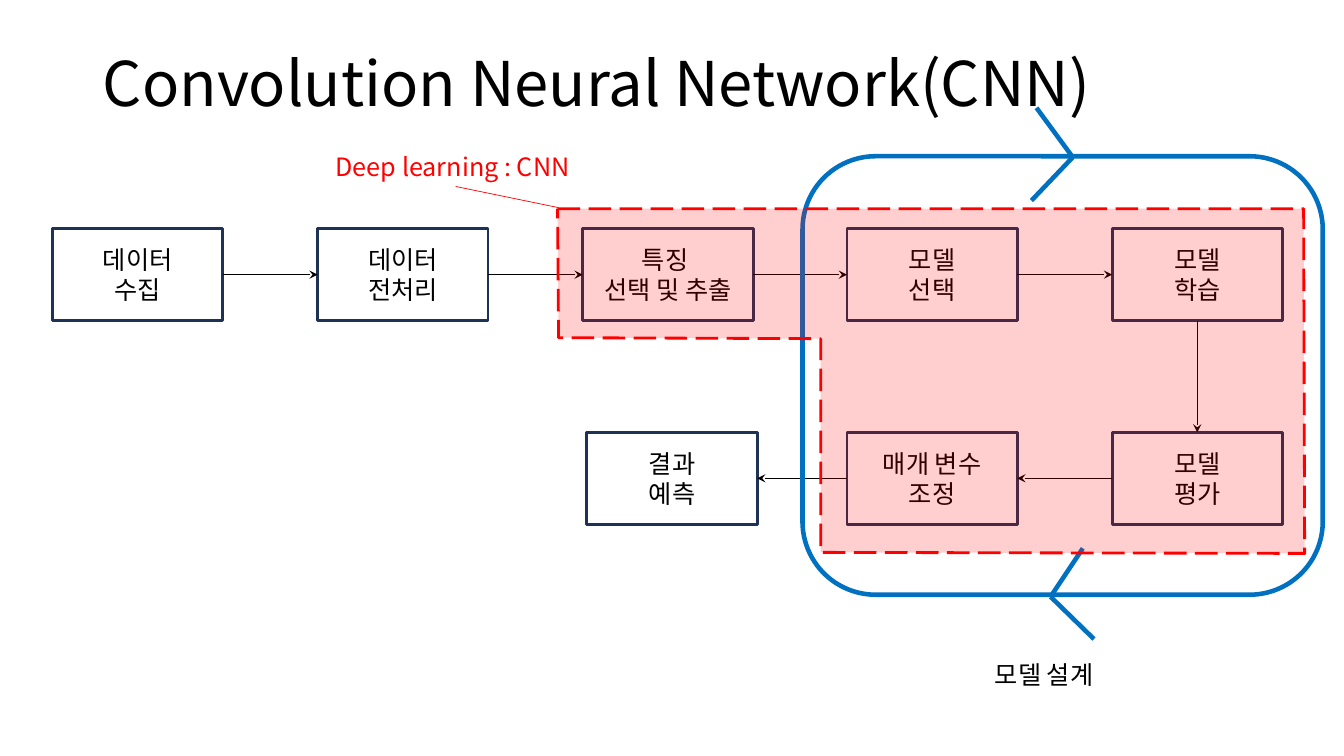
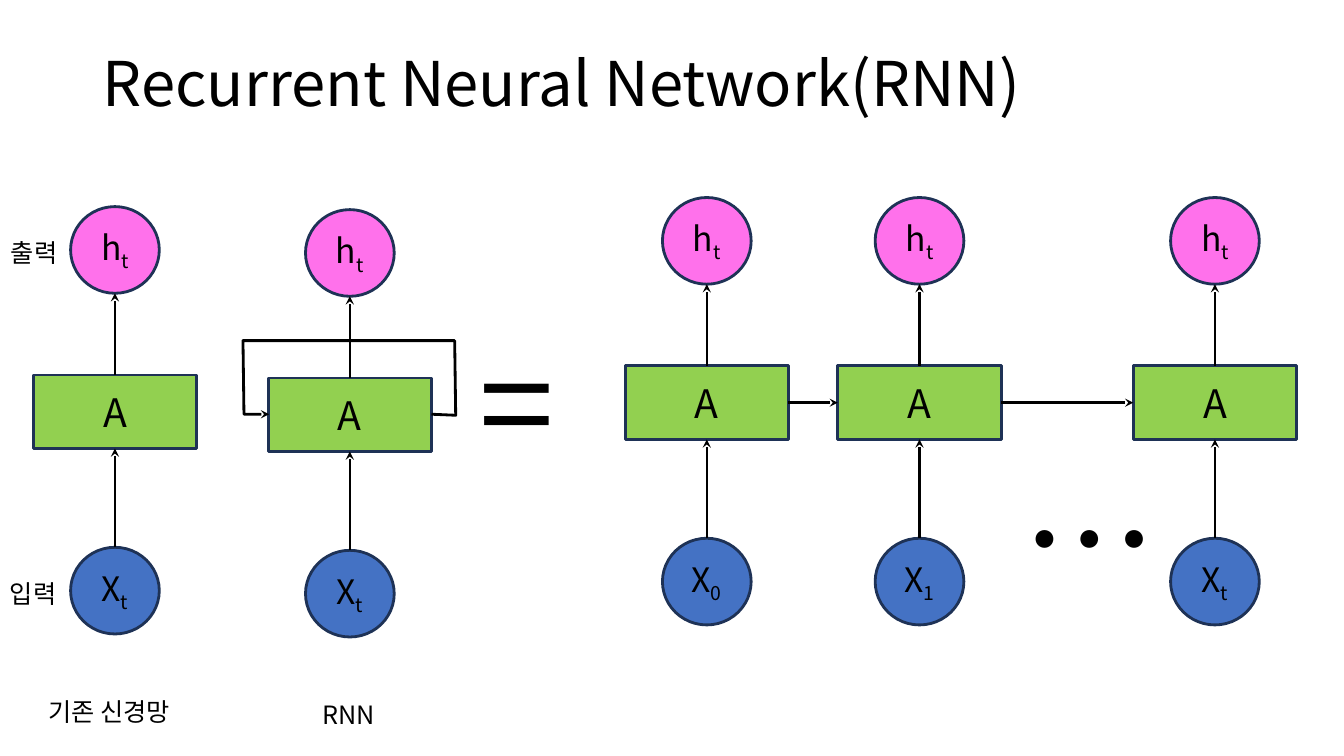
"""Build two slides on convolutional and recurrent neural networks."""
from lxml import etree
from pptx import Presentation
from pptx import util as u
from pptx.dml import color
from pptx.enum import dml, shapes, text
from pptx.oxml import ns

SCALE = 9144
FONT = "Noto Sans CJK KR"
COLORS = {
    "ink": "000000", "border": "1E3256", "paper": "FFFFFF", "design": "0070C0",
    "deep": "FF0000", "cell": "92D050", "input": "4472C4", "output": "FF71EB",
}


def px(value):
    """Turn px (100 to the inch) into EMU."""
    return u.Emu(value * SCALE)


def rgb(name):
    """Look up a named colour."""
    return color.RGBColor.from_string(COLORS[name])


def style_text(frame, size, ink="ink", align=None):
    """Format every run of a text frame."""
    for para in frame.paragraphs:
        para.alignment = align
        for span in para.runs:
            span.font.size = u.Pt(size)
            span.font.color.rgb = rgb(ink)
            span.font.name = FONT
            etree.SubElement(span.font._element, ns.qn("a:ea"), typeface=FONT)


def style_line(item, ink, width, arrow=False):
    """Set line colour and width, with an optional arrowhead at the end."""
    item.line.color.rgb = rgb(ink)
    item.line.width = u.Pt(width)
    if arrow:
        outline = item._element.spPr.find(ns.qn("a:ln"))
        etree.SubElement(outline, ns.qn("a:tailEnd"), type="stealth")


def style_shape(shape, fill, ink, width, arrow=False):
    """Set fill and line of a shape and drop its shadow."""
    shape.shadow.inherit = False
    if fill:
        shape.fill.solid()
        shape.fill.fore_color.rgb = rgb(fill)
    else:
        shape.fill.background()
    style_line(shape, ink, width, arrow)


def add_node(page, kind, box, label, size, fill=None, sub=None):
    """Add an outlined shape with a centred label and optional subscript."""
    shape = page.shapes.add_shape(kind, *map(px, box))
    style_shape(shape, fill, "border", 2)
    frame = shape.text_frame
    frame.text = label
    frame.vertical_anchor = text.MSO_ANCHOR.MIDDLE
    if sub:
        span = frame.paragraphs[0].add_run()
        span.text = sub
        span.font._element.set("baseline", "-25000")
    style_text(frame, size, align=text.PP_ALIGN.CENTER)
    return shape


def add_label(page, box, label, size=18, ink="ink"):
    """Add a one-line text box."""
    shape = page.shapes.add_textbox(*map(px, box))
    frame = shape.text_frame
    frame.text = label
    frame.word_wrap = False
    frame.auto_size = text.MSO_AUTO_SIZE.SHAPE_TO_FIT_TEXT
    style_text(frame, size, ink)


def add_link(page, start, end, ink="ink", width=0.5, arrow=True):
    """Draw a straight line between points or (shape, side) pairs."""
    link = page.shapes.add_connector(shapes.MSO_CONNECTOR.STRAIGHT, 0, 0, 0, 0)
    if isinstance(start[0], int):
        link.begin_x, link.begin_y = map(px, start)
    else:
        link.begin_connect(*start)
    if isinstance(end[0], int):
        link.end_x, link.end_y = map(px, end)
    else:
        link.end_connect(*end)
    style_line(link, ink, width, arrow)
    etree.SubElement(link._element.spPr, ns.qn("a:effectLst"))


def add_outline(page, left, top, points, close):
    """Build a freeform from points relative to a corner."""
    placed = [(left + x, top + y) for x, y in points]
    builder = page.shapes.build_freeform(*placed[0], scale=SCALE)
    builder.add_line_segments(placed[1:], close=close)
    return builder.convert_to_shape()


def add_page(deck, heading):
    """Add a title-only slide with the shared title style."""
    page = deck.slides.add_slide(deck.slide_layouts[5])
    title = page.shapes.title
    title.left, title.top, title.width, title.height = map(px, (92, 40, 1150, 91))
    frame = title.text_frame
    frame.text = heading
    frame.auto_size = text.MSO_AUTO_SIZE.NONE
    frame.vertical_anchor = text.MSO_ANCHOR.MIDDLE
    frame.paragraphs[0].line_spacing = 0.9
    style_text(frame, 44, align=text.PP_ALIGN.LEFT)
    return page


def add_pipeline(page, left, top):
    """Place the learning steps, right along one row and back along the next."""
    forward = ["데이터\n수집", "데이터\n전처리", "특징 \n선택 및 추출", "모델\n선택", "모델\n학습"]
    back = ["모델\n평가", "매개 변수\n조정", "결과\n예측"]
    columns = [left + round(262.75 * i) for i in range(len(forward))]
    places = [(x, top) for x in columns]
    places += [(x, top + 202) for x in (columns[4], columns[3], columns[2] + 4)]
    steps = [
        add_node(page, shapes.MSO_SHAPE.RECTANGLE, (x, y, 169, 91), label, 18,
                 "paper" if label.startswith("특징") else None)
        for (x, y), label in zip(places, forward + back)
    ]
    sides = [(3, 1)] * 4 + [(2, 0)] + [(1, 3)] * 2
    for first, second, (leave, enter) in zip(steps, steps[1:], sides):
        add_link(page, (first, leave), (second, enter))


def add_design_frame(page, left, top, width, height):
    """Place the rounded model-design loop with its two direction marks."""
    loop = page.shapes.add_shape(
        shapes.MSO_SHAPE.ROUNDED_RECTANGLE, *map(px, (left, top, width, height)))
    style_shape(loop, None, "design", 3.25)
    marks = [
        (left + 246, top + height + 2, [(32, -48), (43, 42)]),
        (left + 268, top + 1, [(-36, -49), (-41, 43)]),
    ]
    for x, y, arms in marks:
        for across, down in arms:
            add_link(page, (x + across, y + down), (x, y), "design", 3.25, False)
    add_label(page, (left + 181, top + height + 59, 130, 40), "모델 설계")


def add_deep_region(page, left, top):
    """Place the dashed, see-through deep learning area and its callout."""
    corners = [(0, 0), (740, 0), (741, 342), (261, 341), (261, 129), (1, 128)]
    region = add_outline(page, left, top, corners, True)
    style_shape(region, "deep", "deep", 2)
    region.line.dash_style = dml.MSO_LINE.LONG_DASH
    tint = region._element.spPr.find(ns.qn("a:solidFill")).find(ns.qn("a:srgbClr"))
    etree.SubElement(tint, ns.qn("a:alpha"), val="19000")
    add_label(page, (left - 230, top - 62, 259, 40), "Deep learning : CNN", ink="deep")
    add_link(page, (left + 1, top - 1), (left - 101, top - 22), "deep", 0.5, False)


def add_cell(page, left, top, step):
    """Place one input, cell and output stack and return the cell."""
    center = left + 81
    oval = shapes.MSO_SHAPE.OVAL
    cell = add_node(page, shapes.MSO_SHAPE.RECTANGLE,
                    (left, top + 167, 162, 73), "A", 28, "cell")
    add_node(page, oval, (left + 37, top + 338, 88, 86), "X", 24, "input", step)
    add_node(page, oval, (left + 37, top, 88, 86), "h", 24, "output", "t")
    add_link(page, (center, top + 338), (cell, 2), width=1.75)
    add_link(page, (cell, 0), (center, top + 86), width=1.75)
    return cell


def add_plain_network(page, left, top):
    """Place the ordinary network with its input and output labels."""
    add_cell(page, left, top, "t")
    add_label(page, (left + 5, top + 481, 155, 40), "기존 신경망")
    add_label(page, (left - 33, top + 364, 71, 40), "입력")
    add_label(page, (left - 32, top + 26, 71, 40), "출력")


def add_folded_rnn(page, left, top):
    """Place the recurrent network with its feedback loop."""
    add_cell(page, left, top, "t")
    add_label(page, (left + 44, top + 481, 74, 40), "RNN")
    turns = [(162, 203), (186, 204), (185, 130), (-25, 130), (-24, 203), (1, 203)]
    loop = add_outline(page, left, top, turns, False)
    style_shape(loop, None, "ink", 2, True)


def add_unrolled_rnn(page, left, top):
    """Place the recurrent network spread over time."""
    steps = [(0, "0"), (211, "1"), (504, "t")]
    cells = [add_cell(page, left + x, top, step) for x, step in steps]
    for first, second in zip(cells, cells[1:]):
        add_link(page, (first, 3), (second, 1), width=1.75)
    add_label(page, (left + 384, top + 252, 120, 172), "…", 96)


def build_cnn_page(deck):
    """Build the convolutional network slide."""
    page = add_page(deck, "Convolution Neural Network(CNN)")
    add_pipeline(page, 52, 227)
    add_design_frame(page, 796, 155, 516, 435)
    add_deep_region(page, 553, 207)


def build_rnn_page(deck):
    """Build the recurrent network slide."""
    page = add_page(deck, "Recurrent Neural Network(RNN)")
    add_plain_network(page, 33, 205)
    add_folded_rnn(page, 266, 208)
    add_label(page, (466, 313, 115, 172), "=", 96)
    add_unrolled_rnn(page, 620, 196)


def main():
    """Build and save the deck."""
    deck = Presentation()
    deck.slide_width, deck.slide_height = px(1333), px(750)
    build_cnn_page(deck)
    build_rnn_page(deck)
    deck.save("out.pptx")


if __name__ == "__main__":
    main()
